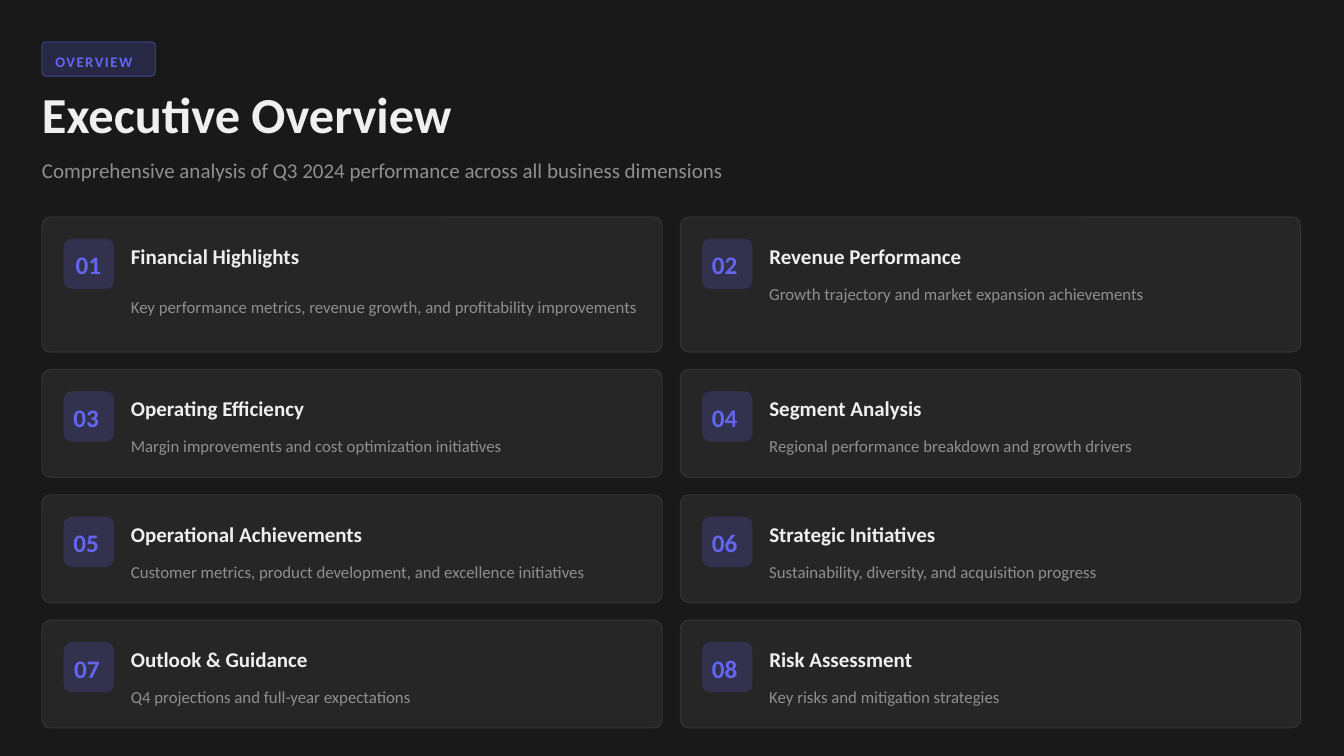
from pptx import Presentation
from pptx.dml.color import RGBColor
from pptx.enum import shapes, text
from pptx import util as u
from lxml import etree

TAG = "OVERVIEW"
TITLE = "Executive Overview"
SUBTITLE = "Comprehensive analysis of Q3 2024 performance across all business dimensions"
SECTIONS = [
    ("01", "Financial Highlights",
     "Key performance metrics, revenue growth, and profitability improvements"),
    ("02", "Revenue Performance", "Growth trajectory and market expansion achievements"),
    ("03", "Operating Efficiency", "Margin improvements and cost optimization initiatives"),
    ("04", "Segment Analysis", "Regional performance breakdown and growth drivers"),
    ("05", "Operational Achievements",
     "Customer metrics, product development, and excellence initiatives"),
    ("06", "Strategic Initiatives", "Sustainability, diversity, and acquisition progress"),
    ("07", "Outlook & Guidance", "Q4 projections and full-year expectations"),
    ("08", "Risk Assessment", "Key risks and mitigation strategies"),
]
COLORS = {"background": "191919", "card": "262626", "border": "333333",
          "accent": "6366F1", "heading": "EFEFEF", "muted": "8F8F8F"}

PX = 6350
MARGIN, GRID_TOP, GAP = 60, 310, 25
CARD_W, ROW_HEIGHTS = 886, [193, 154, 154, 154]
PAD, BADGE, TEXT_X = 31, 72, 127
NUMBER_X, NUMBER_SHIFTS = 45, {"01": 3, "07": 1}
DESCRIPTION_HEIGHTS = {"01": 78}


def rgb(name):
    return RGBColor.from_string(COLORS[name])


def set_alpha(fill_format, percent):
    color = fill_format.fore_color._xFill[0]
    alpha = etree.SubElement(color, color.tag.replace("srgbClr", "alpha"))
    alpha.set("val", str(percent * 1000))


def add_panel(slide, x, y, w, h, radius, fill, alpha=100, border=None, border_alpha=100):
    panel = slide.shapes.add_shape(shapes.MSO_SHAPE.ROUNDED_RECTANGLE,
                                   x * PX, y * PX, w * PX, h * PX)
    panel.adjustments[0] = radius / min(w, h)
    panel.shadow.inherit = False
    panel.fill.solid()
    panel.fill.fore_color.rgb = rgb(fill)
    if alpha < 100:
        set_alpha(panel.fill, alpha)
    if border is None:
        panel.line.fill.background()
        return
    panel.line.color.rgb = rgb(border)
    panel.line.width = u.Pt(0.8)
    if border_alpha < 100:
        set_alpha(panel.line.fill, border_alpha)


def write(holder, box, words, size, color, spacing, bold=False, tracking=None):
    holder.left, holder.top, holder.width, holder.height = [n * PX for n in box]
    frame = holder.text_frame
    frame.text = words
    frame.word_wrap = True
    frame.auto_size = text.MSO_AUTO_SIZE.NONE
    frame.vertical_anchor = text.MSO_ANCHOR.MIDDLE
    frame.margin_left = frame.margin_top = frame.margin_right = frame.margin_bottom = 0
    paragraph = frame.paragraphs[0]
    paragraph.alignment = text.PP_ALIGN.LEFT
    paragraph.line_spacing = spacing
    paragraph.space_before = u.Pt(0)
    run = paragraph.runs[0]
    run.font.name = "Calibri"
    run.font.size = u.Pt(size)
    run.font.bold = bold
    run.font.color.rgb = rgb(color)
    if tracking:
        run.font._element.set("spc", str(tracking))


def add_label(slide, box, *args, **options):
    write(slide.shapes.add_textbox(0, 0, PX, PX), box, *args, **options)


def add_card(slide, x, y, height, number, heading, description):
    add_panel(slide, x, y, CARD_W, height, 12, "card", border="border")
    add_panel(slide, x + PAD, y + PAD, BADGE, BADGE, 12, "accent", alpha=20)
    number_x = x + NUMBER_X + NUMBER_SHIFTS.get(number, 0)
    add_label(slide, (number_x, y + 42, 62, 48), number, 18, "accent", 1.1, bold=True)
    add_label(slide, (x + TEXT_X, y + PAD, 744, 42), heading, 15, "heading", 1.2, bold=True)
    add_label(slide, (x + TEXT_X, y + 84, 742, DESCRIPTION_HEIGHTS.get(number, 39)),
              description, 12, "muted", 1.4)


def main():
    deck = Presentation()
    deck.slide_width, deck.slide_height = 1920 * PX, 1080 * PX
    slide = deck.slides.add_slide(deck.slide_layouts[0])
    slide.background.fill.solid()
    slide.background.fill.fore_color.rgb = rgb("background")

    write(slide.shapes.title, (MARGIN, 134, 1836, 72), TITLE, 36, "heading", 0.8, bold=True)
    write(slide.placeholders[1], (MARGIN, 219, 1814, 42), SUBTITLE, 15, "muted", 1.2)
    add_panel(slide, MARGIN, 60, 162, 49, 6, "accent", alpha=20,
              border="accent", border_alpha=40)
    add_label(slide, (79, 71, 135, 30), TAG, 10.5, "accent", 1.2, bold=True, tracking=110)

    for index, section in enumerate(SECTIONS):
        row, column = divmod(index, 2)
        x = MARGIN + column * (CARD_W + GAP + 1)
        y = GRID_TOP + sum(ROW_HEIGHTS[:row]) + row * GAP
        add_card(slide, x, y, ROW_HEIGHTS[row], *section)

    deck.save("out.pptx")


if __name__ == "__main__":
    main()
